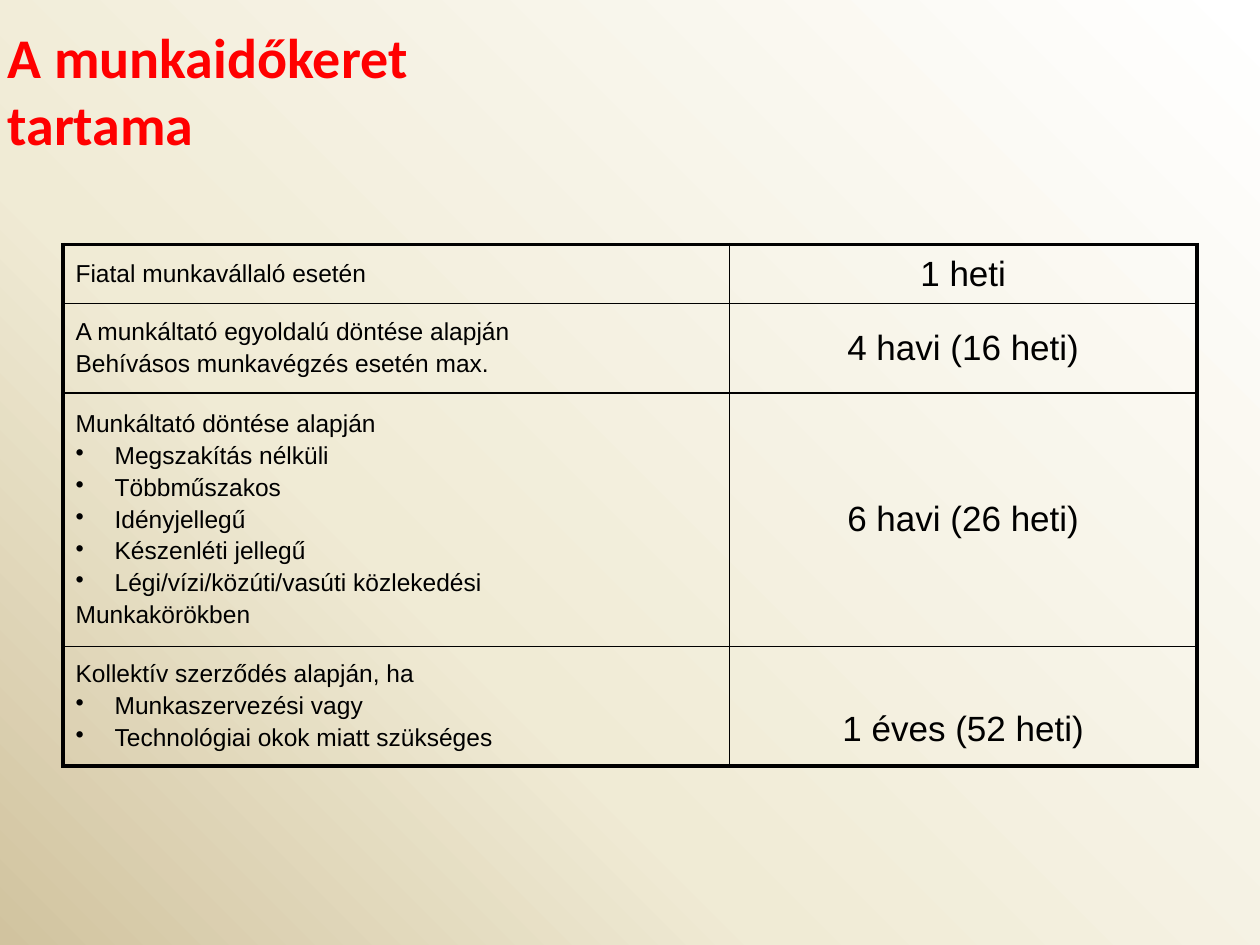
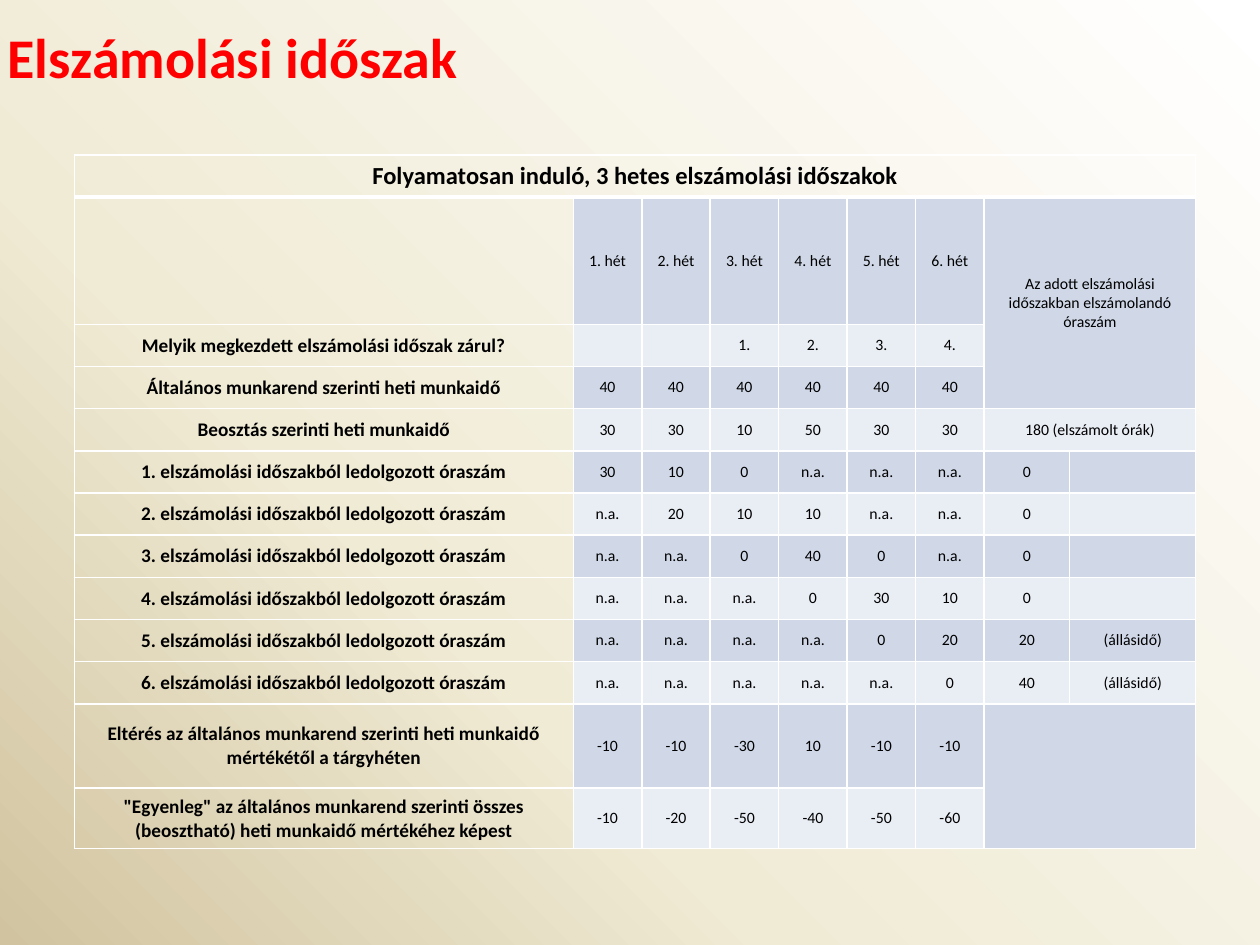
"""Build two slides on working time frames and settlement periods."""
import copy
import lxml.etree
import pptx
import pptx.util
import pptx.dml.color
import pptx.enum.text
import pptx.oxml.ns

WIDE, HIGH = 10, 7.5
RED, BLACK, WHITE = "FF0000", "000000", "FFFFFF"
BANDS = ["E9EDF4", "D0D8E8"]
STOPS = [(0, WHITE), (0.65, "F0EBD5"), (1, "D1C39F")]
THIN, MID, THICK = 1, 2.25, 3

FRAMES = [
    (["Fiatal munkavállaló esetén"], "1 heti"),
    (["A munkáltató egyoldalú döntése alapján",
      "Behívásos munkavégzés esetén max."], "4 havi (16 heti)"),
    (["Munkáltató döntése alapján",
      "• Megszakítás nélküli",
      "• Többműszakos",
      "• Idényjellegű",
      "• Készenléti jellegű",
      "• Légi/vízi/közúti/vasúti közlekedési",
      "Munkakörökben"], "6 havi (26 heti)"),
    (["Kollektív szerződés alapján, ha",
      "• Munkaszervezési vagy",
      "• Technológiai okok miatt szükséges"], "1 éves (52 heti)"),
]
FRAME_BOX = (0.5, 1.94)
FRAME_COLS = [5.29, 3.71]
FRAME_ROWS = [0.47, 0.71, 2.01, 0.95]

NA = "n.a."
PERIOD = "{}. elszámolási időszakból ledolgozott óraszám"
HOURS = [
    [30, 10, 0, NA, NA, NA, 0],
    [NA, 20, 10, 10, NA, NA, 0],
    [NA, NA, 0, 40, 0, NA, 0],
    [NA, NA, NA, 0, 30, 10, 0],
    [NA, NA, NA, NA, 0, 20, 20, "(állásidő)"],
    [NA, NA, NA, NA, NA, 0, 40, "(állásidő)"],
]
WEEKS = [
    ["Folyamatosan induló, 3 hetes elszámolási időszakok"],
    ["", *[f"{n}. hét" for n in range(1, 7)],
     "Az adott elszámolási időszakban elszámolandó óraszám"],
    ["Melyik megkezdett elszámolási időszak zárul?", "", "", "1.", "2.", "3.", "4."],
    ["Általános munkarend szerinti heti munkaidő", *[40] * 6],
    ["Beosztás szerinti heti munkaidő", 30, 30, 10, 50, 30, 30, "180 (elszámolt órák)"],
    *[[PERIOD.format(n), *row] for n, row in enumerate(HOURS, 1)],
    ["Eltérés az általános munkarend szerinti heti munkaidő mértékétől a tárgyhéten",
     -10, -10, -30, 10, -10, -10],
    ['"Egyenleg" az általános munkarend szerinti összes (beosztható) heti munkaidő '
     "mértékéhez képest", -10, -20, -50, -40, -50, -60],
]
MERGES = [(0, 0, 0, 8), (1, 7, 3, 8), (4, 7, 4, 8), (11, 7, 12, 8)]
WEEK_BOX = (0.59, 1.23)
WEEK_COLS = [3.96, *[(8.9 - 3.96 - 0.68 - 1) / 6] * 6, 0.68, 1]
LINE = (5.51 - 1.01 - 0.67 - 0.48) / 10
WEEK_ROWS = [LINE, 1.01, *[LINE] * 9, 0.67, 0.48]

INCH, PT = pptx.util.Inches, pptx.util.Pt
ALIGN, ANCHOR = pptx.enum.text.PP_ALIGN, pptx.enum.text.MSO_ANCHOR


def tint(code):
    return pptx.dml.color.RGBColor.from_string(code)


def tag(parent, name, **attrs):
    node = lxml.etree.SubElement(parent, pptx.oxml.ns.qn(name))
    for key, val in attrs.items():
        node.set(key, str(val))
    return node


def write(para, text, size, font, color=BLACK, bold=False, align=ALIGN.LEFT):
    para.alignment = align
    run = para.add_run()
    run.text = text
    run.font.size, run.font.name, run.font.bold = PT(size), font, bold
    run.font.color.rgb = tint(color)


def paint(master):
    fill = master.background.fill
    fill.gradient()
    fill.gradient_angle = 225
    first = master.element.find(".//" + pptx.oxml.ns.qn("a:gs"))
    first.addnext(copy.deepcopy(first))
    for stop, (place, code) in zip(fill.gradient_stops, STOPS):
        stop.position = place
        stop.color.rgb = tint(code)


def add_page(deck, lines, height):
    page = deck.slides.add_slide(deck.slide_layouts[5])
    title = page.shapes.title
    title.left, title.top = INCH(-0.04), INCH(0.13)
    title.width, title.height = INCH(WIDE), INCH(height)
    frame = title.text_frame
    frame.vertical_anchor = ANCHOR.TOP
    frame.auto_size = pptx.enum.text.MSO_AUTO_SIZE.NONE
    for n, line in enumerate(lines):
        para = frame.add_paragraph() if n else frame.paragraphs[0]
        write(para, line, 32, "Calibri", RED, True)
    return page


def add_grid(page, box, cols, rows):
    grid = page.shapes.add_table(
        len(rows), len(cols), *map(INCH, (*box, sum(cols), sum(rows)))).table
    grid.first_row = grid.horz_banding = False
    for col, width in zip(grid.columns, cols):
        col.width = INCH(width)
    for row, height in zip(grid.rows, rows):
        row.height = INCH(height)
    return grid


def dress(cell, color, edges, sides, ends, fill=None):
    props = cell._tc.get_or_add_tcPr()
    for side, width in zip("LRTB", edges):
        line = tag(props, "a:ln" + side, w=int(PT(width)))
        tag(tag(line, "a:solidFill"), "a:srgbClr", val=color)
    cell.margin_left = cell.margin_right = INCH(sides)
    cell.margin_top = cell.margin_bottom = INCH(ends)
    cell.vertical_anchor = ANCHOR.MIDDLE
    if fill:
        cell.fill.solid()
        cell.fill.fore_color.rgb = tint(fill)
    else:
        cell.fill.background()


def fill_frames(page):
    grid = add_grid(page, FRAME_BOX, FRAME_COLS, FRAME_ROWS)
    last = len(FRAMES) - 1
    for r, (terms, limit) in enumerate(FRAMES):
        top, base = (MID if r == end else THIN for end in (0, last))
        left, right = grid.cell(r, 0), grid.cell(r, 1)
        dress(left, BLACK, (MID, THIN, top, base), 0.1, 0.05)
        dress(right, BLACK, (THIN, MID, top, base), 0.1, 0.05)
        write(right.text_frame.paragraphs[0], limit, 20, "Arial", align=ALIGN.CENTER)
        for n, term in enumerate(terms):
            frame = left.text_frame
            para = frame.add_paragraph() if n else frame.paragraphs[0]
            para.space_before = PT(2.4)
            write(para, term.removeprefix("• "), 14, "Arial")
            if term.startswith("•"):
                props = para._p.get_or_add_pPr()
                props.set("marL", str(INCH(0.31)))
                props.set("indent", str(INCH(-0.31)))
                tag(props, "a:buChar", char="•")
    grid.cell(last, 1).margin_top = INCH(0.41)


def fill_weeks(page):
    grid = add_grid(page, WEEK_BOX, WEEK_COLS, WEEK_ROWS)
    for r, row in enumerate(WEEKS):
        edges = (THIN, THIN, THICK if r == 1 else THIN, THIN if r else THICK)
        for c in range(len(WEEK_COLS)):
            cell = grid.cell(r, c)
            dress(cell, WHITE, edges, 0.05, 0, BANDS[r % 2] if r and c else None)
            if c < len(row) and row[c] != "":
                size = 14 if r == 0 else 9 if c else 11
                write(cell.text_frame.paragraphs[0], str(row[c]), size, "Calibri",
                      bold=c == 0, align=ALIGN.CENTER)
    for top, left, base, right in MERGES:
        grid.cell(top, left).merge(grid.cell(base, right))


def main():
    deck = pptx.Presentation()
    deck.slide_width, deck.slide_height = INCH(WIDE), INCH(HIGH)
    paint(deck.slide_master)
    fill_frames(add_page(deck, ["A munkaidőkeret", "tartama"], 1.18))
    fill_weeks(add_page(deck, ["Elszámolási időszak"], 0.64))
    deck.save("out.pptx")


if __name__ == "__main__":
    main()
